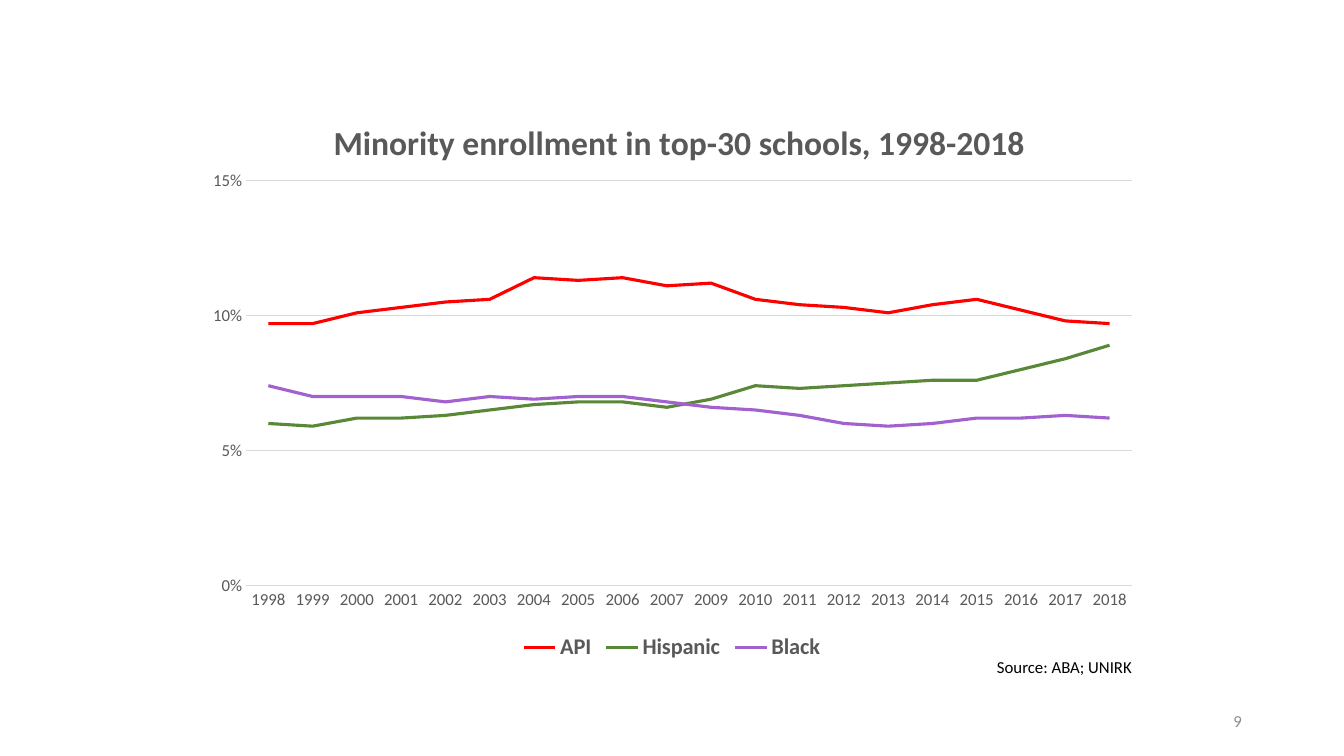
from dataclasses import dataclass

from lxml.etree import SubElement
from pptx import Presentation
from pptx.chart.data import CategoryChartData
from pptx.dml.color import RGBColor
from pptx.enum.chart import XL_CHART_TYPE, XL_LEGEND_POSITION, XL_TICK_MARK
from pptx.enum.text import MSO_ANCHOR, PP_ALIGN
from pptx.oxml.ns import qn
from pptx.util import Cm, Pt


@dataclass(frozen=True)
class Theme:
    font: str = "Calibri"
    ink: str = "000000"
    label: str = "595959"
    muted: str = "8C8C8C"
    grid: str = "D9D9D9"
    api: str = "FF0000"
    hispanic: str = "588838"
    black: str = "A162D0"
    title_size: int = 24
    legend_size: int = 16
    small_size: int = 12
    series_width: float = 2.25
    grid_width: float = 0.75


THEME = Theme()

YEARS = [str(y) for y in range(1998, 2019) if y != 2008]
ENROLLMENT = [
    ("API", THEME.api,
     [0.097, 0.097, 0.101, 0.103, 0.105, 0.106, 0.114, 0.113, 0.114, 0.111,
      0.112, 0.106, 0.104, 0.103, 0.101, 0.104, 0.106, 0.102, 0.098, 0.097]),
    ("Hispanic", THEME.hispanic,
     [0.06, 0.059, 0.062, 0.062, 0.063, 0.065, 0.067, 0.068, 0.068, 0.066,
      0.069, 0.074, 0.073, 0.074, 0.075, 0.076, 0.076, 0.08, 0.084, 0.089]),
    ("Black", THEME.black,
     [0.074, 0.07, 0.07, 0.07, 0.068, 0.07, 0.069, 0.07, 0.07, 0.068,
      0.066, 0.065, 0.063, 0.06, 0.059, 0.06, 0.062, 0.062, 0.063, 0.062]),
]


def style_font(font, size, color, bold=False):
    font.name = THEME.font
    font.size = Pt(size)
    font.bold = bold
    font.color.rgb = RGBColor.from_string(color)


def style_line(line, color, width):
    line.color.rgb = RGBColor.from_string(color)
    line.width = Pt(width)


def set_layout(parent, index, **fractions):
    """Place a chart part by fractions of the chart's own size."""
    layout = parent.find(qn("c:layout"))
    if layout is None:
        layout = SubElement(parent, qn("c:layout"))
        parent.insert(index, layout)
    manual = SubElement(layout, qn("c:manualLayout"))
    if "w" in fractions:
        SubElement(manual, qn("c:layoutTarget")).set("val", "inner")
    for mode in ("xMode", "yMode"):
        SubElement(manual, qn(f"c:{mode}")).set("val", "edge")
    for name, value in fractions.items():
        SubElement(manual, qn(f"c:{name}")).set("val", str(value))


def style_axes(chart):
    cat, val = chart.category_axis, chart.value_axis
    for axis in (cat, val):
        axis.major_tick_mark = axis.minor_tick_mark = XL_TICK_MARK.NONE
        style_font(axis.tick_labels.font, THEME.small_size, THEME.label)
    style_line(cat.format.line, THEME.grid, THEME.grid_width)
    val.format.line.fill.background()
    val.minimum_scale, val.maximum_scale, val.major_unit = 0, 0.15, 0.05
    val.tick_labels.number_format = "0%"
    val.tick_labels.number_format_is_linked = False
    val.has_major_gridlines = True
    style_line(val.major_gridlines.format.line, THEME.grid, THEME.grid_width)


def add_enrollment_chart(s, left, top, width, height):
    data = CategoryChartData(number_format="0.0%")
    data.categories = YEARS
    for name, _, values in ENROLLMENT:
        data.add_series(name, values)
    chart = s.shapes.add_chart(
        XL_CHART_TYPE.LINE, left, top, width, height, data).chart
    style_font(chart.font, THEME.small_size, THEME.label)

    chart.has_title = True
    title = chart.chart_title
    title.include_in_layout = False
    p = title.text_frame.paragraphs[0]
    p.text = "Minority enrollment in top-30 schools, 1998-2018"
    style_font(p.font, THEME.title_size, THEME.label, bold=True)

    chart.has_legend = True
    chart.legend.position = XL_LEGEND_POSITION.BOTTOM
    chart.legend.include_in_layout = False
    style_font(chart.legend.font, THEME.legend_size, THEME.label, bold=True)

    style_axes(chart)
    plot = chart.plots[0]
    plot.vary_by_categories = False
    for series, (_, color, _) in zip(plot.series, ENROLLMENT):
        series.smooth = False
        style_line(series.format.line, color, THEME.series_width)

    title_xml = title.text_frame._txBody.getparent().getparent()
    set_layout(title_xml, 1, x=0.14, y=0.04)
    plot_area = chart.element.find(qn("c:chart")).find(qn("c:plotArea"))
    set_layout(plot_area, 0, x=0.055, y=0.156, w=0.926, h=0.705)


def add_right_text(s, left, top, width, height, text, color,
                   anchor=MSO_ANCHOR.TOP):
    tf = s.shapes.add_textbox(left, top, width, height).text_frame
    tf.word_wrap = True
    tf.vertical_anchor = anchor
    p = tf.paragraphs[0]
    p.text = text
    p.alignment = PP_ALIGN.RIGHT
    style_font(p.font, THEME.small_size, color)


def build_enrollment_slide(prs):
    s = prs.slides.add_slide(prs.slide_layouts[6])
    add_enrollment_chart(s, Cm(4.88), Cm(2.29), Cm(24.1), Cm(14.48))
    add_right_text(s, Cm(18.16), Cm(16.43), Cm(10.62), Cm(0.77),
                   "Source: ABA; UNIRK", THEME.ink)
    add_right_text(s, Cm(23.93), Cm(17.65), Cm(7.62), Cm(1.02),
                   "9", THEME.muted, MSO_ANCHOR.MIDDLE)


def main():
    prs = Presentation()
    prs.slide_width, prs.slide_height = Cm(33.87), Cm(19.05)
    build_enrollment_slide(prs)
    prs.save("out.pptx")


if __name__ == "__main__":
    main()
